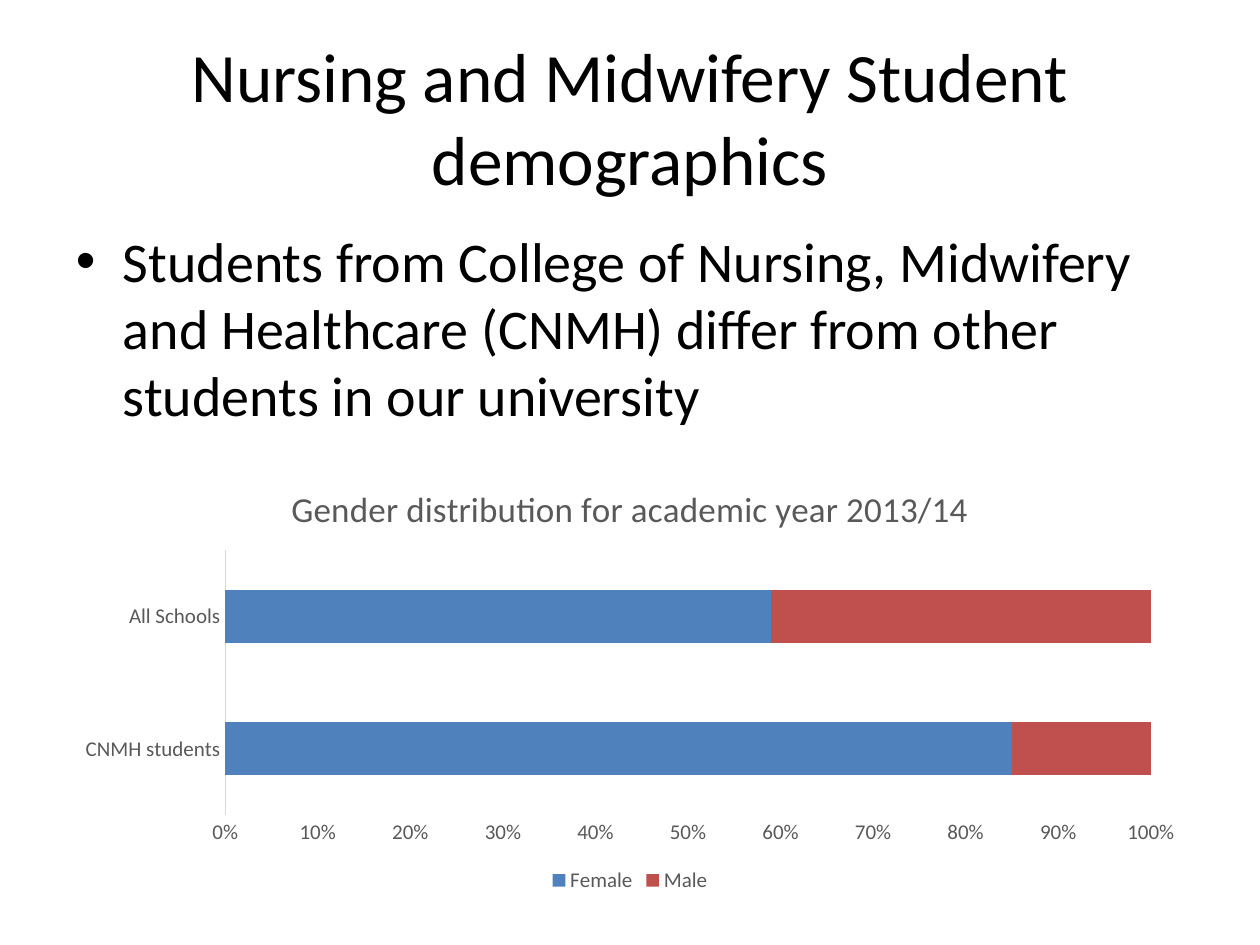
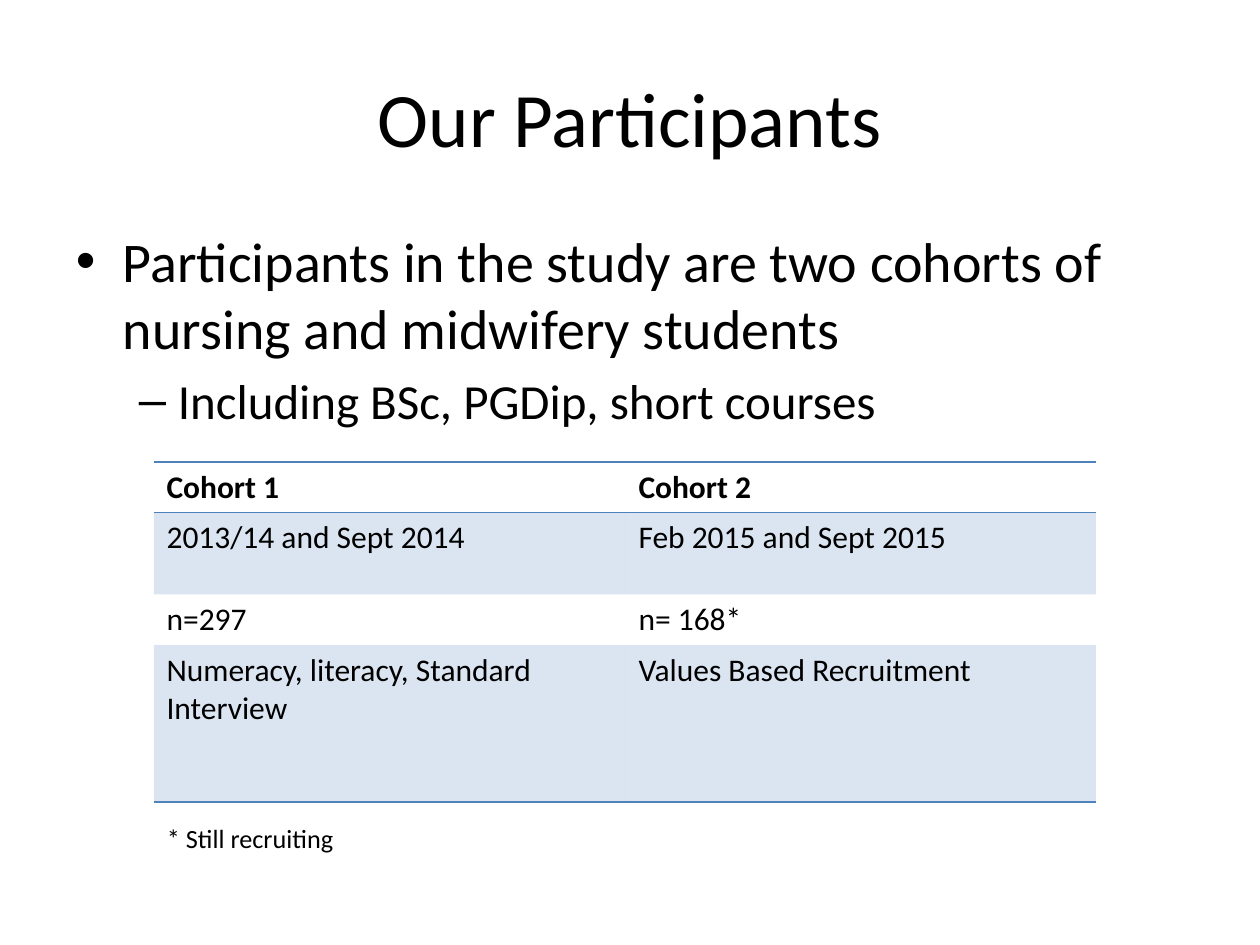
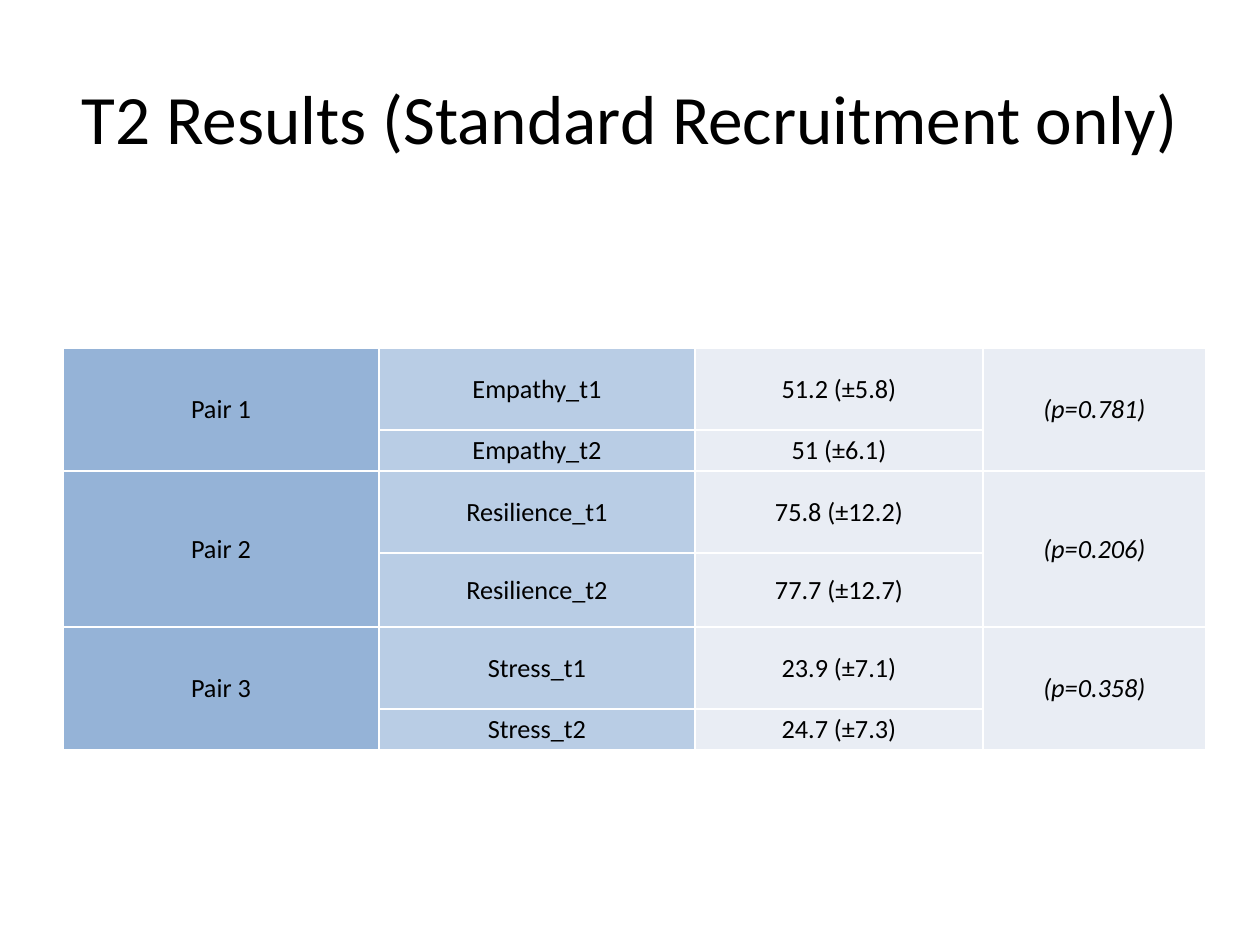
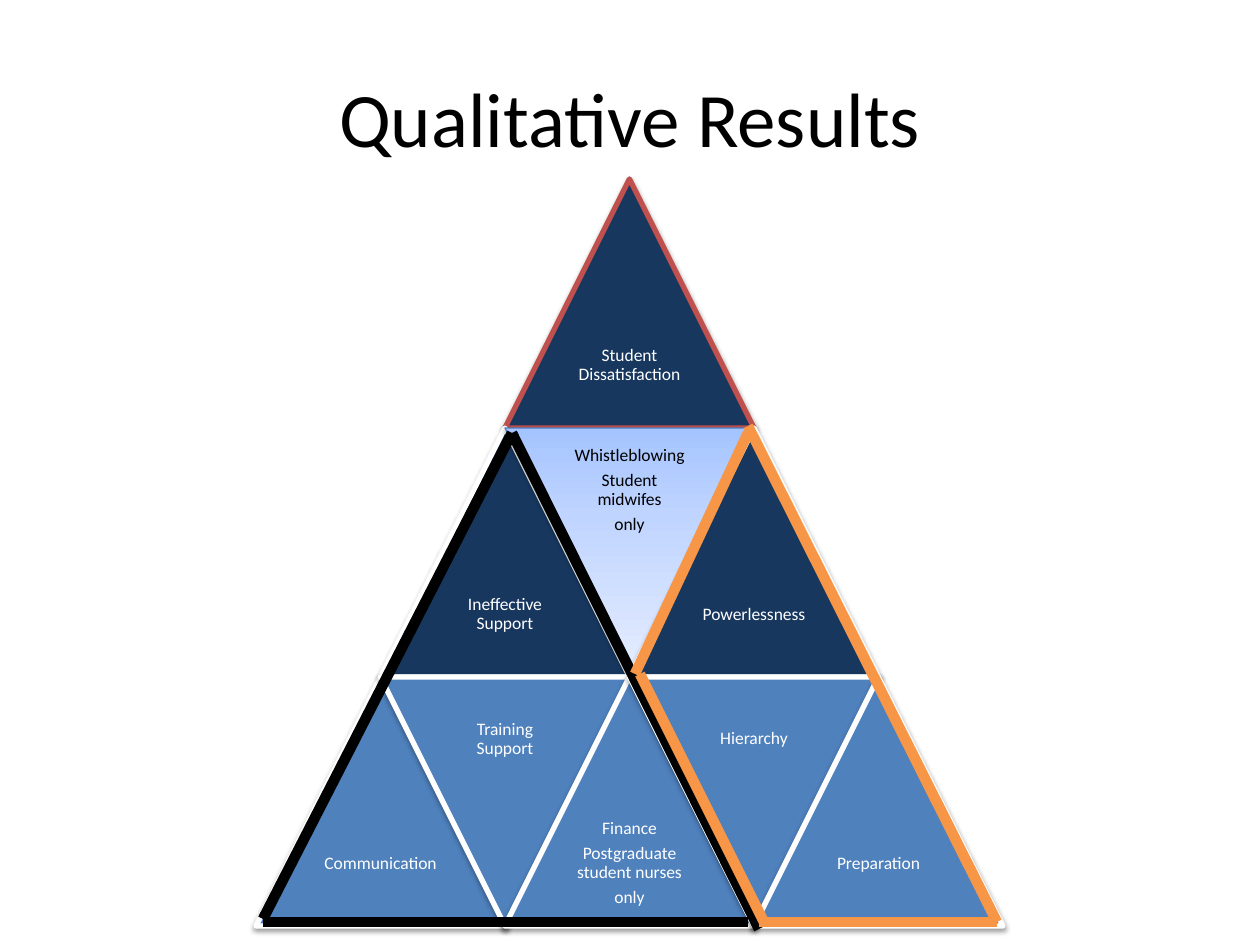
"""Build four slides on nursing and midwifery students."""
from lxml import etree
from pptx import Presentation, util as u
from pptx.chart.data import CategoryChartData
from pptx.dml.color import RGBColor
from pptx.enum import chart as ch, shapes, text
from pptx.oxml.ns import qn

PX = 914400 / 126
FONT = "Calibri"
BLACK, WHITE, GREY, RULE = "000000", "FFFFFF", "595959", "D9D9D9"
BLUE, RED, NAVY, ORANGE = "4F81BD", "C0504D", "17375E", "F79646"
PAIR, MEASURE, RESULT = "95B3D7", "B9CDE5", "E9EDF4"

TITLE_BOX = (63, 38, 1134, 157)
BODY_BOX = (63, 220, 1134, 624)
BULLETS = [
    {"mark": "•", "size": 32, "margin": 47, "hang": 47},
    {"mark": "–", "size": 28, "margin": 102, "hang": 39},
]

DEMOGRAPHICS = {
    "title": ("Nursing and Midwifery Student demographics", 39.6),
    "bullets": [(0, "Students from College of Nursing, Midwifery and Healthcare (CNMH) "
                    "differ from other students in our university")],
    "chart_title": "Gender distribution for academic year 2013/14",
    "chart_box": (63, 462, 1134, 436),
    "groups": ["CNMH students", "All Schools"],
    "genders": [("Female", (85, 59), BLUE), ("Male", (15, 41), RED)],
}
PARTICIPANTS = {
    "title": ("Our Participants", 44),
    "bullets": [(0, "Participants in the study are two cohorts of nursing and midwifery students"),
                (1, "Including BSc, PGDip, short courses")],
    "origin": (154, 462),
    "columns": (472, 470),
    "heights": (49, 82, 49, 157),
    "cohorts": [("Cohort 1", "Cohort 2"),
                ("2013/14 and Sept 2014", "Feb 2015 and Sept 2015"),
                ("n=297", "n= 168*"),
                ("Numeracy, literacy, Standard Interview", "Values Based Recruitment")],
    "footnote": "* Still recruiting",
    "footnote_box": (154, 816, 357, 44),
}
RESULTS = {
    "title": ("T2 Results (Standard Recruitment only)", 39.6),
    "origin": (63, 348),
    "columns": (316, 316, 288, 223),
    "heights": (82, 41, 82, 74, 82, 41),
    "pairs": [("Pair 1", "Empathy", ("51.2 (±5.8)", "51 (±6.1)"), "(p=0.781)"),
              ("Pair 2", "Resilience", ("75.8 (±12.2)", "77.7 (±12.7)"), "(p=0.206)"),
              ("Pair 3", "Stress", ("23.9 (±7.1)", "24.7 (±7.3)"), "(p=0.358)")],
}
QUALITATIVE = {
    "title": ("Qualitative Results", 44),
    "apex": (505, 179),
    "side": 249,
    "themes": [
        [(NAVY, RED, ["Student Dissatisfaction"])],
        [(NAVY, WHITE, ["Ineffective Support"]),
         (None, "4B7EBC", ["Whistleblowing", "Student midwifes", "only"]),
         (NAVY, WHITE, ["Powerlessness"])],
        [(BLUE, WHITE, ["Communication"]),
         (BLUE, WHITE, ["Training Support"]),
         (BLUE, WHITE, ["Finance", "Postgraduate student nurses", "only"]),
         (BLUE, WHITE, ["Hierarchy"]),
         (BLUE, WHITE, ["Preparation"])],
    ],
    "whistle_stops": [(0, "A4C4FF"), (35, "BFD4FF"), (100, "E6EEFF")],
    "outlines": [(BLACK, [(512, 433, 263, 919), (512, 433, 759, 929), (263, 922, 748, 922)]),
                 (ORANGE, [(748, 426, 997, 922), (748, 433, 635, 674),
                           (997, 922, 759, 922), (640, 674, 764, 922)])],
}


def px(length):
    """Turn px into EMU."""
    return u.Emu(round(length * PX))


def box(*lengths):
    """Turn several px lengths into EMU."""
    return [px(length) for length in lengths]


def rgb(code):
    """Turn a hex string into a colour."""
    return RGBColor.from_string(code)


def assign(target, values):
    """Set each named attribute on the target."""
    for name, value in values.items():
        setattr(target, name, value)


def add_xml(parent, tag, **attributes):
    """Append an element with the given attributes."""
    return etree.SubElement(parent, qn(tag), {k: str(v) for k, v in attributes.items()})


def set_font(font, size, color=BLACK, **extra):
    """Apply the shared typeface with a size and colour."""
    assign(font, {"name": FONT, "size": u.Pt(size), **extra})
    font.color.rgb = rgb(color)


def set_line(line, color, width):
    """Give a line its colour and width in points."""
    line.color.rgb = rgb(color)
    line.width = u.Pt(width)


def set_frame(frame, margins=(13, 6, 13, 6), anchor=text.MSO_ANCHOR.TOP):
    """Wrap a text frame and set its insets and anchor."""
    sides = ("margin_left", "margin_top", "margin_right", "margin_bottom")
    assign(frame, {**dict(zip(sides, box(*margins))), "word_wrap": True, "vertical_anchor": anchor})


def write(frame, lines, size, color=BLACK, layout=None, **extra):
    """Write one paragraph for each line."""
    for index, line in enumerate(lines):
        paragraph = frame.add_paragraph() if index else frame.paragraphs[0]
        assign(paragraph, layout or {})
        run = paragraph.add_run()
        run.text = line
        set_font(run.font, size, color, **extra)


def add_titled_slide(deck, title):
    """Add a title-only slide and fill its title."""
    slide = deck.slides.add_slide(deck.slide_layouts[5])
    heading = slide.shapes.title
    assign(heading, dict(zip(("left", "top", "width", "height"), box(*TITLE_BOX))))
    set_frame(heading.text_frame, anchor=text.MSO_ANCHOR.MIDDLE)
    wording, size = title
    write(heading.text_frame, [wording], size, layout={"alignment": text.PP_ALIGN.CENTER})
    return slide


def add_bullets(slide, bullets):
    """Add the body text with hanging bullets."""
    frame = slide.shapes.add_textbox(*box(*BODY_BOX)).text_frame
    set_frame(frame)
    for index, (level, line) in enumerate(bullets):
        bullet = BULLETS[level]
        paragraph = frame.add_paragraph() if index else frame.paragraphs[0]
        assign(paragraph, {"level": level, "space_before": u.Pt(bullet["size"] * 0.2)})
        run = paragraph.add_run()
        run.text = line
        set_font(run.font, bullet["size"])
        properties = paragraph._p.get_or_add_pPr()
        properties.set("marL", str(px(bullet["margin"])))
        properties.set("indent", str(px(-bullet["hang"])))
        add_xml(properties, "a:buFont", typeface="Arial")
        add_xml(properties, "a:buChar", char=bullet["mark"])


def add_gender_chart(slide, content):
    """Add the stacked gender chart."""
    data = CategoryChartData()
    data.categories = content["groups"]
    for gender, shares, _ in content["genders"]:
        data.add_series(gender, shares)
    chart = slide.shapes.add_chart(
        ch.XL_CHART_TYPE.BAR_STACKED_100, *box(*content["chart_box"]), data).chart
    set_font(chart.font, 12, GREY)
    write(chart.chart_title.text_frame, [content["chart_title"]], 20, GREY, bold=False)
    assign(chart, {"has_legend": True})
    assign(chart.legend, {"position": ch.XL_LEGEND_POSITION.BOTTOM, "include_in_layout": False})
    set_font(chart.legend.font, 12, GREY)
    for axis in (chart.category_axis, chart.value_axis):
        assign(axis, {"has_major_gridlines": False,
                      "major_tick_mark": ch.XL_TICK_MARK.NONE,
                      "minor_tick_mark": ch.XL_TICK_MARK.NONE})
        set_font(axis.tick_labels.font, 12, GREY)
    set_line(chart.category_axis.format.line, RULE, 0.75)
    chart.value_axis.format.line.fill.background()
    assign(chart.value_axis.tick_labels, {"number_format": "0%", "number_format_is_linked": False})
    bars = chart.plots[0]
    assign(bars, {"gap_width": 150, "overlap": 100, "vary_by_categories": False})
    for series, (_, _, color) in zip(bars.series, content["genders"]):
        series.format.fill.solid()
        series.format.fill.fore_color.rgb = rgb(color)


def add_grid(slide, content):
    """Add an unbanded table with the given columns and heights."""
    columns, heights = content["columns"], content["heights"]
    table = slide.shapes.add_table(len(heights), len(columns),
                                   *box(*content["origin"], sum(columns), sum(heights))).table
    assign(table, {"first_row": False, "horz_banding": False})
    for column, width in zip(table.columns, columns):
        column.width = px(width)
    for row, height in zip(table.rows, heights):
        row.height = px(height)
    return table


def format_cell(cell, borders, fill=None, alpha=100):
    """Set the four borders of a cell, then its fill."""
    properties = cell._tc.get_or_add_tcPr()
    for side in "LRTB":
        edge = add_xml(properties, f"a:ln{side}", w=u.Pt(1))
        if side in borders:
            add_xml(add_xml(edge, "a:solidFill"), "a:srgbClr", val=borders[side])
        else:
            add_xml(edge, "a:noFill")
    if fill is None:
        cell.fill.background()
        return
    cell.fill.solid()
    cell.fill.fore_color.rgb = rgb(fill)
    if alpha < 100:
        add_xml(properties.find(qn("a:solidFill"))[0], "a:alpha", val=alpha * 1000)


def add_cohort_table(slide, content):
    """Add the cohort table with every second row tinted."""
    table = add_grid(slide, content)
    edges = {0: "TB", 1: "T", len(content["cohorts"]) - 1: "B"}
    for r, row in enumerate(content["cohorts"]):
        for c, wording in enumerate(row):
            cell = table.cell(r, c)
            write(cell.text_frame, [wording], 18, bold=r == 0)
            format_cell(cell, dict.fromkeys(edges.get(r, ""), BLUE), BLUE if r % 2 else None, 20)


def add_pair_table(slide, content):
    """Add the paired results, two rows to a pair."""
    table = add_grid(slide, content)
    fills = (PAIR, MEASURE, RESULT, RESULT)
    for p, (pair, measure, scores, probability) in enumerate(content["pairs"]):
        top = 2 * p
        for c in (0, 3):
            table.cell(top, c).merge(table.cell(top + 1, c))
        for t, score in enumerate(scores):
            row = (pair, f"{measure}_t{t + 1}", score, probability)
            for c, wording in enumerate(row):
                cell = table.cell(top + t, c)
                format_cell(cell, dict.fromkeys("LRTB", WHITE), fills[c])
                if cell.is_spanned:
                    continue
                assign(cell, {"vertical_anchor": text.MSO_ANCHOR.MIDDLE,
                              "margin_left": px(1), "margin_right": px(1),
                              "margin_top": px(1), "margin_bottom": 0})
                write(cell.text_frame, [wording], 15, italic=c == 3,
                      layout={"alignment": text.PP_ALIGN.CENTER})


def add_theme(group, left, top, side, inverted, theme, stops):
    """Add one triangle and its label."""
    fill, outline, lines = theme
    triangle = group.shapes.add_shape(shapes.MSO_SHAPE.ISOSCELES_TRIANGLE,
                                      *box(left, top, side, side))
    triangle.rotation = 180 if inverted else 0
    set_line(triangle.line, outline, 3 if fill else 0.75)
    if fill:
        triangle.fill.solid()
        triangle.fill.fore_color.rgb = rgb(fill)
    else:
        triangle.fill.gradient()
        triangle.fill.gradient_angle = 90
        stop_list = triangle._element.spPr.find(".//" + qn("a:gsLst"))
        stop_list.clear()
        for position, color in stops:
            add_xml(add_xml(stop_list, "a:gs", pos=position * 1000), "a:srgbClr", val=color)
    triangle.shadow.inherit = False
    shadow = add_xml(triangle._element.spPr.find(qn("a:effectLst")), "a:outerShdw",
                     blurRad=u.Pt(3.1), dist=u.Pt(1.6), dir=5400000, rotWithShape=0)
    add_xml(add_xml(shadow, "a:srgbClr", val=BLACK), "a:alpha", val=38000)
    label_top = top if inverted else top + side / 2
    label = group.shapes.add_textbox(*box(left + side / 4, label_top, side / 2, side / 2))
    set_frame(label.text_frame, (5, 5, 5, 5), text.MSO_ANCHOR.MIDDLE)
    write(label.text_frame, lines, 10, WHITE if fill else BLACK,
          layout={"alignment": text.PP_ALIGN.CENTER, "line_spacing": 0.9,
                  "space_after": u.Pt(3.5)})


def add_pyramid(slide, content):
    """Add the theme triangles row by row and the heavy outlines."""
    left, top = content["apex"]
    side = content["side"]
    group = slide.shapes.add_group_shape()
    for r, row in enumerate(content["themes"]):
        for c, theme in enumerate(row):
            add_theme(group, left + (c - r) * side / 2, top + r * side, side,
                      c % 2 == 1, theme, content["whistle_stops"])
    for color, strokes in content["outlines"]:
        for ends in strokes:
            stroke = slide.shapes.add_connector(shapes.MSO_CONNECTOR.STRAIGHT, *box(*ends))
            set_line(stroke.line, color, 6)
            add_xml(stroke._element.spPr, "a:effectLst")


def main():
    """Build and save the deck."""
    deck = Presentation()
    assign(deck, {"slide_width": px(1260), "slide_height": px(945)})

    demographics = add_titled_slide(deck, DEMOGRAPHICS["title"])
    add_bullets(demographics, DEMOGRAPHICS["bullets"])
    add_gender_chart(demographics, DEMOGRAPHICS)

    participants = add_titled_slide(deck, PARTICIPANTS["title"])
    add_bullets(participants, PARTICIPANTS["bullets"])
    add_cohort_table(participants, PARTICIPANTS)
    footnote = participants.shapes.add_textbox(*box(*PARTICIPANTS["footnote_box"])).text_frame
    set_frame(footnote)
    write(footnote, [PARTICIPANTS["footnote"]], 15)

    add_pair_table(add_titled_slide(deck, RESULTS["title"]), RESULTS)
    add_pyramid(add_titled_slide(deck, QUALITATIVE["title"]), QUALITATIVE)
    deck.save("out.pptx")


if __name__ == "__main__":
    main()
